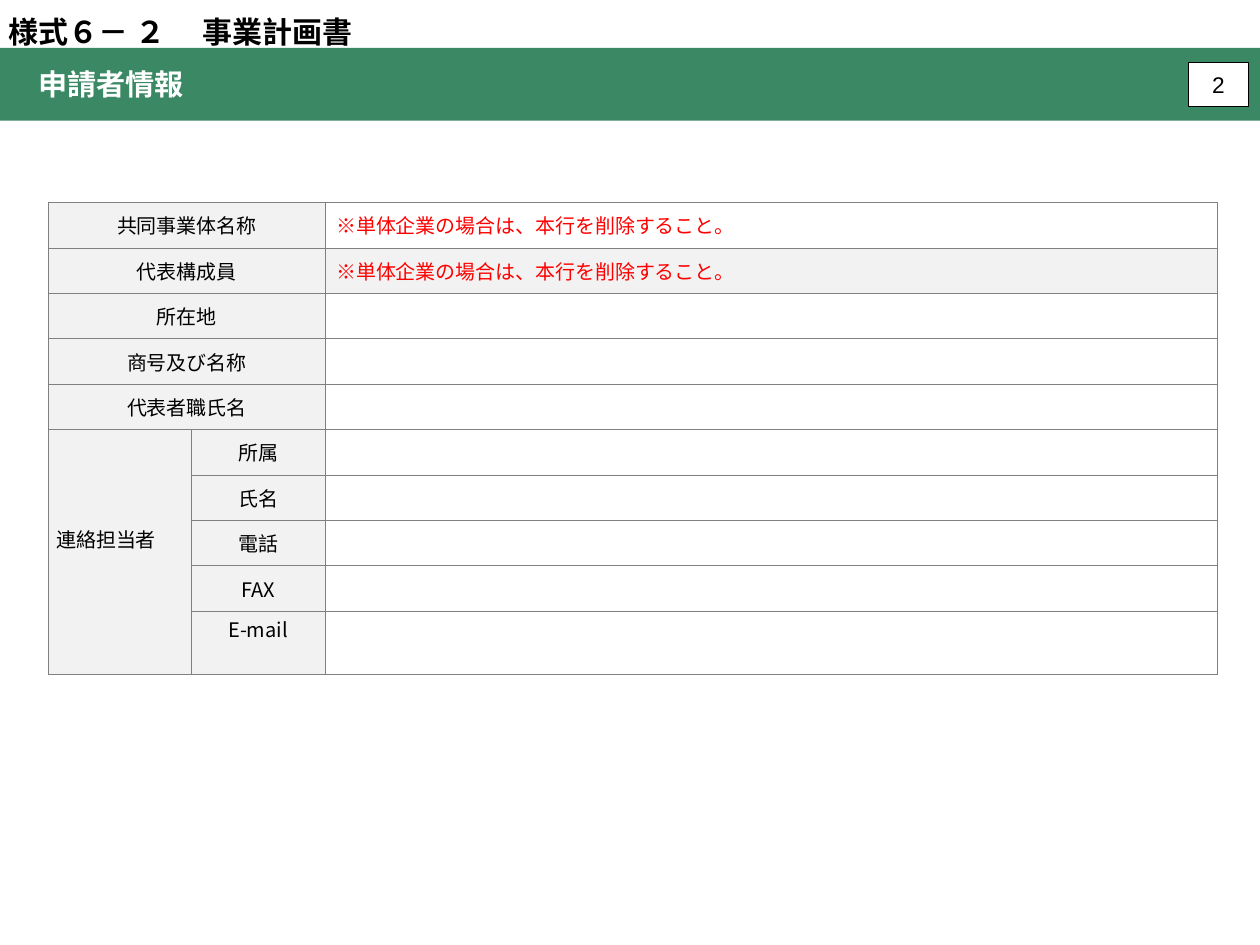
from lxml.etree import SubElement
from pptx import Presentation
from pptx.dml.color import RGBColor
from pptx.enum.shapes import MSO_SHAPE
from pptx.enum.text import MSO_ANCHOR, MSO_AUTO_SIZE, PP_ALIGN
from pptx.oxml.ns import qn
from pptx.util import Pt

COLORS = {
    "band": "3B8964",
    "label": "F2F2F2",
    "white": "FFFFFF",
    "text": "000000",
    "note": "FF0000",
    "grid": "808080",
}
JAPANESE = "Noto Sans CJK JP"
NOTE = "※単体企業の場合は、本行を削除すること。"
APPLICANT_ROWS = [
    ("共同事業体名称", NOTE, "white"),
    ("代表構成員", NOTE, "label"),
    ("所在地", "", "white"),
    ("商号及び名称", "", "white"),
    ("代表者職氏名", "", "white"),
]
CONTACT_ROWS = ["所属", "氏名", "電話", "FAX", "E-mail"]


def color(name):
    return RGBColor.from_string(COLORS[name])


def write(frame, text, size, tint="text", align=PP_ALIGN.LEFT, font=JAPANESE, bold=False):
    para = frame.paragraphs[0]
    para.alignment = align
    span = para.add_run()
    span.text = text
    span.font.size = Pt(size)
    span.font.bold = bold
    span.font.color.rgb = color(tint)
    span.font.name = font
    SubElement(span.font._element, qn("a:ea"), typeface=font)


def add_panel(page, box, fill):
    panel = page.shapes.add_shape(MSO_SHAPE.RECTANGLE, *map(Pt, box))
    panel.shadow.inherit = False
    panel.fill.solid()
    panel.fill.fore_color.rgb = color(fill)
    panel.line.fill.background()
    panel.text_frame.vertical_anchor = MSO_ANCHOR.MIDDLE
    return panel


def add_form_name(page, box):
    label = page.shapes.add_textbox(*map(Pt, box))
    label.text_frame.word_wrap = True
    label.text_frame.auto_size = MSO_AUTO_SIZE.SHAPE_TO_FIT_TEXT
    write(label.text_frame, "様式６－ ２ \u3000事業計画書".replace("\u3000", "　"), 24, bold=True)


def add_title_band(page, box):
    left, top, width, height = box
    band = add_panel(page, box, "band")
    band.text_frame.margin_left = Pt(30.5)
    write(band.text_frame, "申請者情報", 23.3, "white", bold=True)

    # Page number at the right end of the band
    number = add_panel(page, (left + width - 57, top + 11.5, 47.5, 35.5), "white")
    number.line.color.rgb = color("text")
    number.line.width = Pt(0.75)
    write(number.text_frame, "2", 18.1, align=PP_ALIGN.CENTER, font="Arial")


def style_cell(cell, fill):
    properties = cell._tc.get_or_add_tcPr()
    for side in ("a:lnL", "a:lnR", "a:lnT", "a:lnB"):
        line = SubElement(properties, qn(side), w=str(Pt(0.5)))
        solid = SubElement(line, qn("a:solidFill"))
        SubElement(solid, qn("a:srgbClr"), val=COLORS["grid"])
    cell.fill.solid()
    cell.fill.fore_color.rgb = color(fill)
    cell.vertical_anchor = MSO_ANCHOR.MIDDLE


def fill_cell(cell, text, margins, tint="text", align=PP_ALIGN.CENTER):
    side, top, bottom = margins
    cell.margin_left = cell.margin_right = Pt(side)
    cell.margin_top, cell.margin_bottom = Pt(top), Pt(bottom)
    write(cell.text_frame, text, 16, tint, align)


def add_applicant_table(page, box):
    left, top, width, height = box
    first_contact = len(APPLICANT_ROWS)
    count = first_contact + len(CONTACT_ROWS)
    table = page.shapes.add_table(count, 3, *map(Pt, box)).table
    table.first_row = table.horz_banding = False

    # Column widths and row heights: the last row is taller
    for column, size in zip(table.columns, (114, 107, width - 221)):
        column.width = Pt(size)
    last_height = 51
    for row in table.rows:
        row.height = Pt((height - last_height) / (count - 1))
    table.rows[count - 1].height = Pt(last_height)

    # Grid and fills
    fills = [row[2] for row in APPLICANT_ROWS] + ["white"] * len(CONTACT_ROWS)
    for index, fill in enumerate(fills):
        for column, name in enumerate(("label", "label", fill)):
            style_cell(table.cell(index, column), name)

    # Applicant rows, with the label across two columns
    for index, (label, note, _) in enumerate(APPLICANT_ROWS):
        table.cell(index, 0).merge(table.cell(index, 1))
        fill_cell(table.cell(index, 0), label, (6, 0, 0))
        if note:
            fill_cell(table.cell(index, 2), note, (9, 4, 4), "note", PP_ALIGN.LEFT)

    # Contact rows, with one shared label; text in the tall row sits high
    contact = table.cell(first_contact, 0)
    contact.merge(table.cell(count - 1, 0))
    fill_cell(contact, "連絡担当者", (6, 0, 22), align=PP_ALIGN.LEFT)
    for index, label in enumerate(CONTACT_ROWS, first_contact):
        bottom = 22 if index == count - 1 else 0
        fill_cell(table.cell(index, 1), label, (6, 0, bottom))


def main():
    deck = Presentation()
    deck.slide_width, deck.slide_height = Pt(1008), Pt(756)
    page = deck.slides.add_slide(deck.slide_layouts[6])
    add_title_band(page, (0, 38.2, 1008, 58.3))
    add_form_name(page, (0, 7.2, 817, 36))
    add_applicant_table(page, (39, 162, 935, 378))
    deck.save("out.pptx")


if __name__ == "__main__":
    main()
